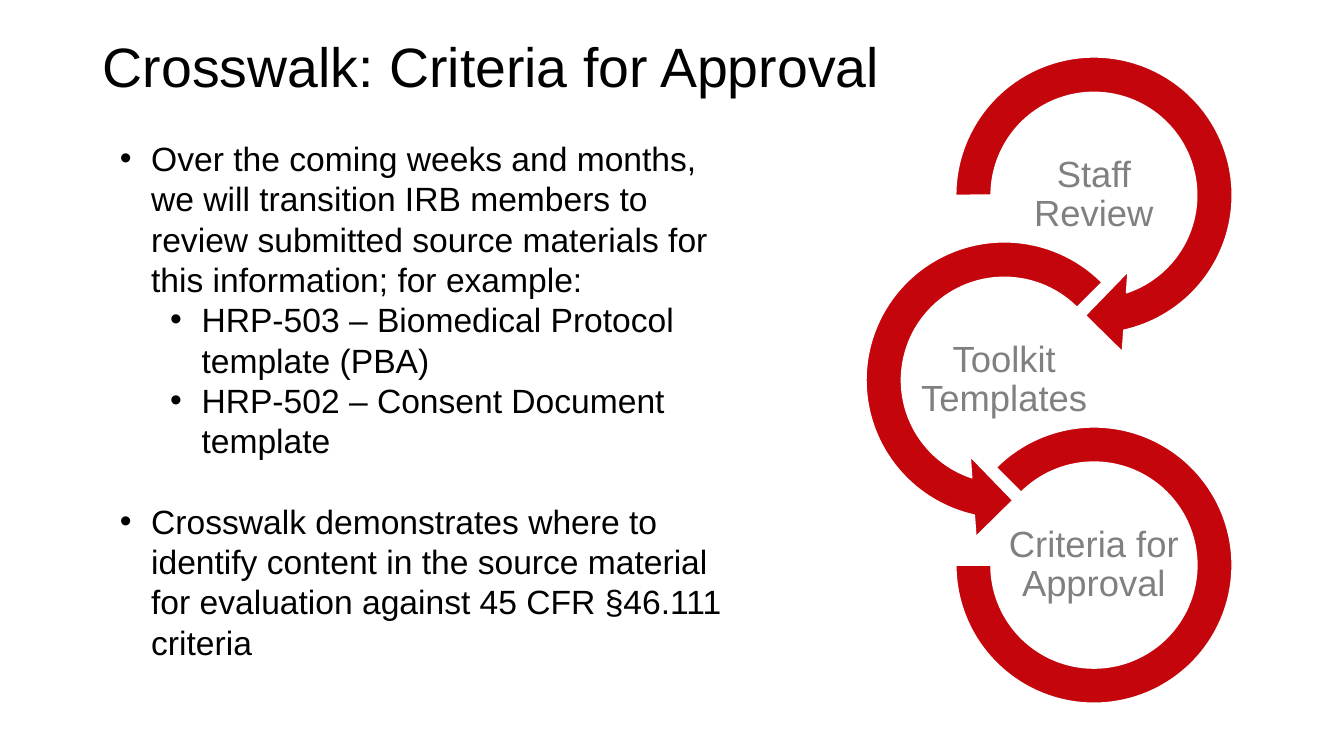
import pptx
import pptx.util
import pptx.oxml
import pptx.oxml.ns
import pptx.dml.color
import pptx.enum.shapes
import pptx.enum.text

Cm = pptx.util.Cm
Pt = pptx.util.Pt
SHAPE = pptx.enum.shapes.MSO_SHAPE
ALIGN = pptx.enum.text.PP_ALIGN
ANCHOR = pptx.enum.text.MSO_ANCHOR
RED = pptx.dml.color.RGBColor(0xC5, 0x05, 0x0C)
GREY = pptx.dml.color.RGBColor(0x80, 0x80, 0x80)
BLACK = pptx.dml.color.RGBColor(0, 0, 0)
WHITE = pptx.dml.color.RGBColor(0xFF, 0xFF, 0xFF)

TITLE = {"size": Pt(39.6), "color": BLACK}
BODY = {"size": Pt(24), "color": BLACK}
LABEL = {"size": Pt(26), "color": GREY}

POINTS = [
    (0, 0, "Over the coming weeks and months, we will transition IRB members to "
           "review submitted source materials for this information; for example:"),
    (1, 0, "HRP-503 – Biomedical Protocol template (PBA)"),
    (1, 0, "HRP-502 – Consent Document template"),
    (0, 28.8, "Crosswalk demonstrates where to identify content in the source "
              "material for evaluation against 45 CFR §46.111 criteria"),
]
STEPS = [
    ("Staff Review", SHAPE.CIRCULAR_ARROW, 27.57, 8.1,
     [0.11, 11.423, 45, 108, 0.125]),
    ("Toolkit Templates", SHAPE.LEFT_CIRCULAR_ARROW, 25.31, 8.1,
     [0.11, 11.423, 63, 189, 0.125]),
    ("Criteria for Approval", SHAPE.BLOCK_ARC, 27.57, 6.96,
     [135, 108, 0.127]),
]
FIRST, PITCH = 4.92, 4.66


def apply(item, values):
    for name, value in values.items():
        setattr(item, name, value)


def style(para, look, **values):
    apply(para, values)
    apply(para.font, {"name": "Arial", "size": look["size"]})
    para.font.color.rgb = look["color"]


def bullet(para, level):
    props = para._p.get_or_add_pPr()
    props.set("marL", str(Cm(0.79 + 1.27 * level)))
    props.set("indent", str(Cm(-0.79)))
    for tag, key, value in (("a:buFont", "typeface", "Arial"),
                            ("a:buChar", "char", "•")):
        mark = pptx.oxml.parse_xml(
            f'<{tag} {pptx.oxml.ns.nsdecls("a")} {key}="{value}"/>')
        props.append(mark)


def head(slide, text):
    title = slide.shapes.title
    apply(title, {"left": Cm(2.34), "top": Cm(0.91),
                  "width": Cm(29.21), "height": Cm(1.7)})
    frame = title.text_frame
    frame.text = text
    apply(frame, {"vertical_anchor": ANCHOR.MIDDLE, "word_wrap": True,
                  "auto_size": pptx.enum.text.MSO_AUTO_SIZE.NONE})
    style(frame.paragraphs[0], TITLE, alignment=ALIGN.LEFT, line_spacing=0.9)


def body(slide, points):
    box = slide.shapes.add_textbox(Cm(2.77), Cm(3.35), Cm(15.77), Cm(14.45))
    frame = box.text_frame
    frame.word_wrap = True
    for spot, (level, gap, text) in enumerate(points):
        para = frame.add_paragraph() if spot else frame.paragraphs[0]
        para.text = text
        bullet(para, level)
        style(para, BODY, level=level, space_before=Pt(gap))


def ring(slide, kind, mid, row, size, bends):
    arc = slide.shapes.add_shape(kind, Cm(mid - size / 2), Cm(row - size / 2),
                                 Cm(size), Cm(size))
    arc.shadow.inherit = False
    for spot, bend in enumerate(bends):
        arc.adjustments[spot] = bend
    arc.fill.solid()
    arc.fill.fore_color.rgb = RED
    arc.line.color.rgb = WHITE
    arc.line.width = Pt(1)


def label(slide, text, mid, row):
    wide, high = 4.5, 2.26
    box = slide.shapes.add_textbox(Cm(mid - wide / 2), Cm(row - high / 2),
                                   Cm(wide), Cm(high))
    frame = box.text_frame
    frame.text = text
    inset = Cm(0.05)
    apply(frame, {"word_wrap": True, "vertical_anchor": ANCHOR.MIDDLE,
                  "margin_left": inset, "margin_right": inset,
                  "margin_top": inset, "margin_bottom": inset})
    style(frame.paragraphs[0], LABEL, alignment=ALIGN.CENTER, line_spacing=0.9)


def main():
    deck = pptx.Presentation()
    apply(deck, {"slide_width": Cm(33.87), "slide_height": Cm(19.05)})
    slide = deck.slides.add_slide(deck.slide_layouts.get_by_name("Title Only"))
    head(slide, "Crosswalk: Criteria for Approval")
    for spot, (text, kind, mid, size, bends) in enumerate(STEPS):
        row = FIRST + PITCH * spot
        ring(slide, kind, mid, row, size, bends)
        label(slide, text, mid, row)
    body(slide, POINTS)
    deck.save("out.pptx")


if __name__ == "__main__":
    main()
